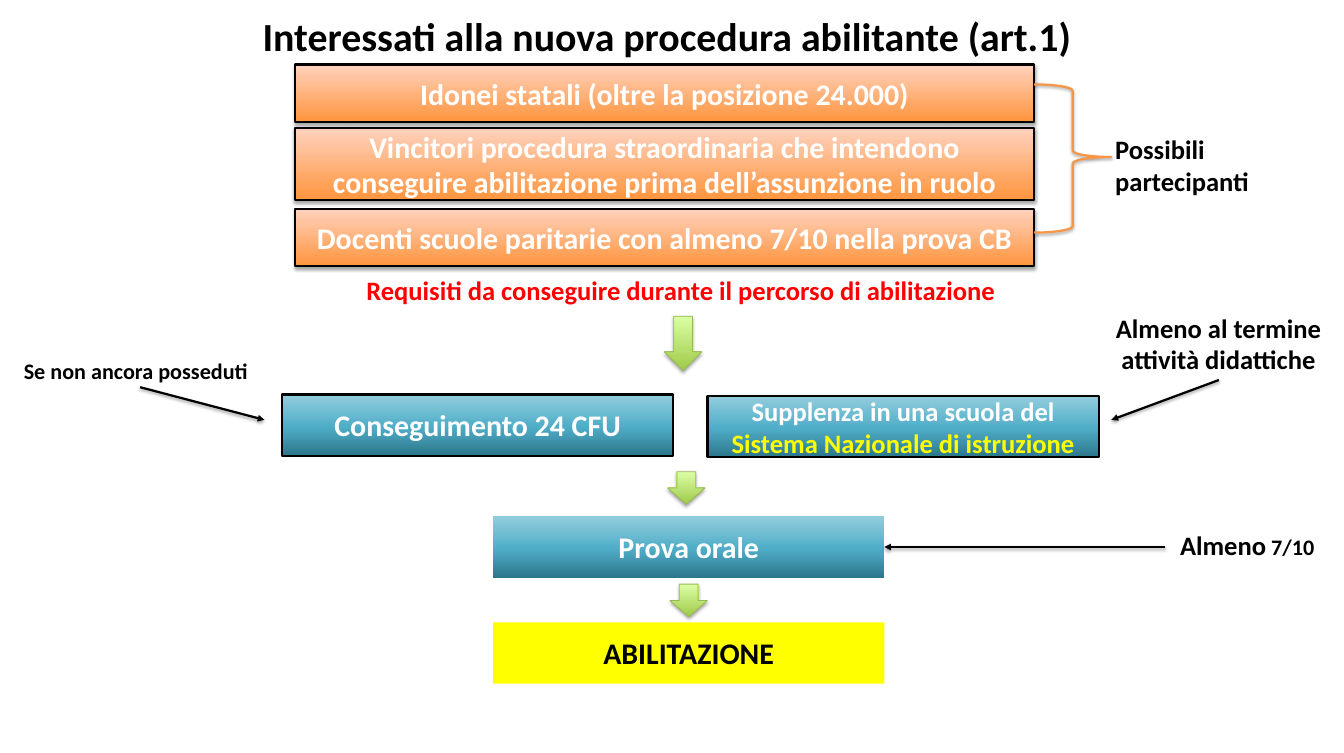
from dataclasses import dataclass
from typing import Any, NamedTuple

from pptx import Presentation
from pptx.dml.color import RGBColor
from pptx.enum.shapes import MSO_CONNECTOR as Wire, MSO_SHAPE as Form
from pptx.enum.text import MSO_ANCHOR as Anchor, PP_ALIGN as Align
from pptx.oxml.ns import qn
from pptx.oxml.xmlchemy import OxmlElement as make
from pptx.util import Pt

BLACK, WHITE, RED, YELLOW = "000000", "FFFFFF", "FF0000", "FFFF00"
ORANGE = ((0, "FF953E"), (100, "FFD2BD"))
TEAL = ((0, "2C778B"), (48, "50AEC8"), (100, "93CDDD"))
GREEN = ((0, "A0CA4A"), (100, "DAFFA5"))


class Run(NamedTuple):
    text: str
    size: float = 24
    color: str = BLACK


class Shade(NamedTuple):
    alpha: int
    dist: float


SOFT, DEEP = Shade(35, 1.8), Shade(38, 1.6)


@dataclass
class Block:
    at: tuple
    paras: tuple = ()
    form: Any = Form.RECTANGLE
    fill: Any = None
    line: str = ""
    width: float = 2
    shade: Any = None
    adjust: tuple = ()


@dataclass
class Note:
    at: tuple
    paras: tuple
    align: Any = Align.CENTER
    anchor: Any = Anchor.TOP
    inset: tuple = (7.2, 3.6)


@dataclass
class Arrow:
    start: tuple
    end: tuple
    target: str = ""


def rgb(code: str) -> RGBColor:
    return RGBColor.from_string(code)


def apply(item: Any, values: dict) -> None:
    for name, value in values.items():
        setattr(item, name, value)


def node(tag: str, **values: Any) -> Any:
    item = make(tag)
    for name, value in values.items():
        item.set(name, str(value))
    return item


def tint(code: str, alpha: int = 100) -> Any:
    item = node("a:srgbClr", val=code)
    if alpha < 100:
        item.append(node("a:alpha", val=alpha * 1000))
    return item


def cast(effects: Any, shade: Shade) -> None:
    outer = node("a:outerShdw", blurRad=Pt(3.1), dist=Pt(shade.dist),
                 dir=5400000, rotWithShape=0)
    outer.append(tint(BLACK, shade.alpha))
    effects.append(outer)


def blend(shape: Any, stops: tuple) -> None:
    shape.fill.gradient()
    shape.fill.gradient_angle = 90
    group = next(shape.element.spPr.iter(qn("a:gsLst")))
    group.clear()
    for place, code in stops:
        stop = node("a:gs", pos=place * 1000)
        stop.append(tint(code))
        group.append(stop)


def write(frame: Any, paras: tuple, align: Any, anchor: Any, inset: tuple) -> None:
    side, edge = map(Pt, inset)
    apply(frame, {"word_wrap": True, "vertical_anchor": anchor,
                  "margin_left": side, "margin_right": side,
                  "margin_top": edge, "margin_bottom": edge})
    for index, runs in enumerate(paras):
        para = frame.add_paragraph() if index else frame.paragraphs[0]
        para.alignment = align
        for part in runs:
            run = para.add_run()
            run.text = part.text
            apply(run.font, {"name": "Calibri", "size": Pt(part.size), "bold": True})
            run.font.color.rgb = rgb(part.color)


def draw_block(slide: Any, block: Block) -> Any:
    shape = slide.shapes.add_shape(block.form, *map(Pt, block.at))
    for index, value in enumerate(block.adjust):
        shape.adjustments[index] = value
    if isinstance(block.fill, tuple):
        blend(shape, block.fill)
    elif block.fill:
        shape.fill.solid()
        shape.fill.fore_color.rgb = rgb(block.fill)
    else:
        shape.fill.background()
    if block.line:
        shape.line.color.rgb = rgb(block.line)
        shape.line.width = Pt(block.width)
    else:
        shape.line.fill.background()
    shape.shadow.inherit = False
    if block.shade:
        cast(shape.element.spPr.find(qn("a:effectLst")), block.shade)
    if block.paras:
        write(shape.text_frame, block.paras, Align.CENTER, Anchor.MIDDLE, (7.2, 3.6))
    return shape


def draw_note(slide: Any, note: Note) -> None:
    box = slide.shapes.add_textbox(*map(Pt, note.at))
    write(box.text_frame, note.paras, note.align, note.anchor, note.inset)


def draw_arrow(slide: Any, arrow: Arrow, shapes: dict) -> None:
    wire = slide.shapes.add_connector(Wire.STRAIGHT, *map(Pt, arrow.start + arrow.end))
    if arrow.target:
        wire.end_connect(shapes[arrow.target], 3)
    wire.line.color.rgb = rgb(BLACK)
    wire.line.width = Pt(2)
    props = wire._element.spPr
    props.find(qn("a:ln")).append(node("a:tailEnd", type="triangle"))
    effects = node("a:effectLst")
    props.append(effects)
    cast(effects, DEEP)


def bar(top: float, high: float, text: str) -> Block:
    return Block((266.4, top, 668.2, high), ((Run(text, 27, WHITE),),),
                 fill=ORANGE, line=BLACK, shade=SOFT)


def step(left: float, top: float, *runs: Run, fill: Any = TEAL, line: str = "") -> Block:
    return Block((left, top, 353.5, 55.4), (runs,), fill=fill, line=line)


def down(left: float, top: float, high: float) -> Block:
    return Block((left, top, 33.8, high), form=Form.DOWN_ARROW, fill=GREEN,
                 line="98B955", width=0.75, shade=SOFT)


BLOCKS = {
    "idonei": bar(58.3, 51.8, "Idonei statali (oltre la posizione 24.000)"),
    "vincitori": bar(115.9, 64.8, "Vincitori procedura straordinaria che intendono "
                     "conseguire abilitazione prima dell’assunzione in ruolo"),
    "docenti": bar(188.6, 51.8, "Docenti scuole paritarie con almeno 7/10 nella prova CB"),
    "brace": Block((934.6, 76.3, 69.8, 133.9), form=Form.RIGHT_BRACE, line="F79646",
                   shade=DEEP, adjust=(0.083, 0.49)),
    "crediti": step(254.9, 356.4, Run("Conseguimento 24 CFU", 27, WHITE), line=BLACK),
    "supplenza": step(639.4, 357.8, Run("Supplenza in una scuola del ", 24, WHITE),
                      Run("Sistema Nazionale di istruzione", 24, YELLOW), line=BLACK),
    "prova": step(445.7, 466.6, Run("Prova orale", 27, WHITE)),
    "esito": step(445.7, 562.3, Run("ABILITAZIONE", 27), fill=YELLOW),
    "down1": down(600.5, 285.8, 49),
    "down2": down(603.4, 426.2, 29.5),
    "down3": down(605.5, 527.8, 29.5),
}

NOTES = (
    Note((23, 5, 1160, 54.7),
         ((Run("Interessati alla nuova procedura abilitante (art.1)", 36),),),
         anchor=Anchor.MIDDLE, inset=(10.8, 5.8)),
    Note((1000.8, 116.6, 198.7, 65.5),
         ((Run("Possibili"),), (Run("partecipanti"),)), Align.LEFT),
    Note((311, 244.1, 608.4, 36),
         ((Run("Requisiti da conseguire durante il percorso di abilitazione", 24, RED),),)),
    Note((14.4, 319, 224.6, 31.7), ((Run("Se non ancora posseduti", 20),),), Align.LEFT),
    Note((987.8, 277.9, 226.8, 65.5), ((Run("Almeno al termine attività didattiche"),),)),
    Note((1040, 474.5, 174.4, 36), ((Run("Almeno"), Run(" 7/10", 20)),)),
)

ARROWS = (
    Arrow((126.7, 349.9), (239, 379.4)),
    Arrow((1101.6, 343.4), (1004.4, 379.4)),
    Arrow((1052.6, 494.3), (799.2, 494.3), "prova"),
)


def main() -> None:
    deck = Presentation()
    apply(deck, {"slide_width": Pt(1214.64), "slide_height": Pt(680.4)})
    slide = deck.slides.add_slide(deck.slide_layouts[6])
    shapes = {name: draw_block(slide, block) for name, block in BLOCKS.items()}
    for note in NOTES:
        draw_note(slide, note)
    for arrow in ARROWS:
        draw_arrow(slide, arrow, shapes)
    deck.save("out.pptx")


if __name__ == "__main__":
    main()
